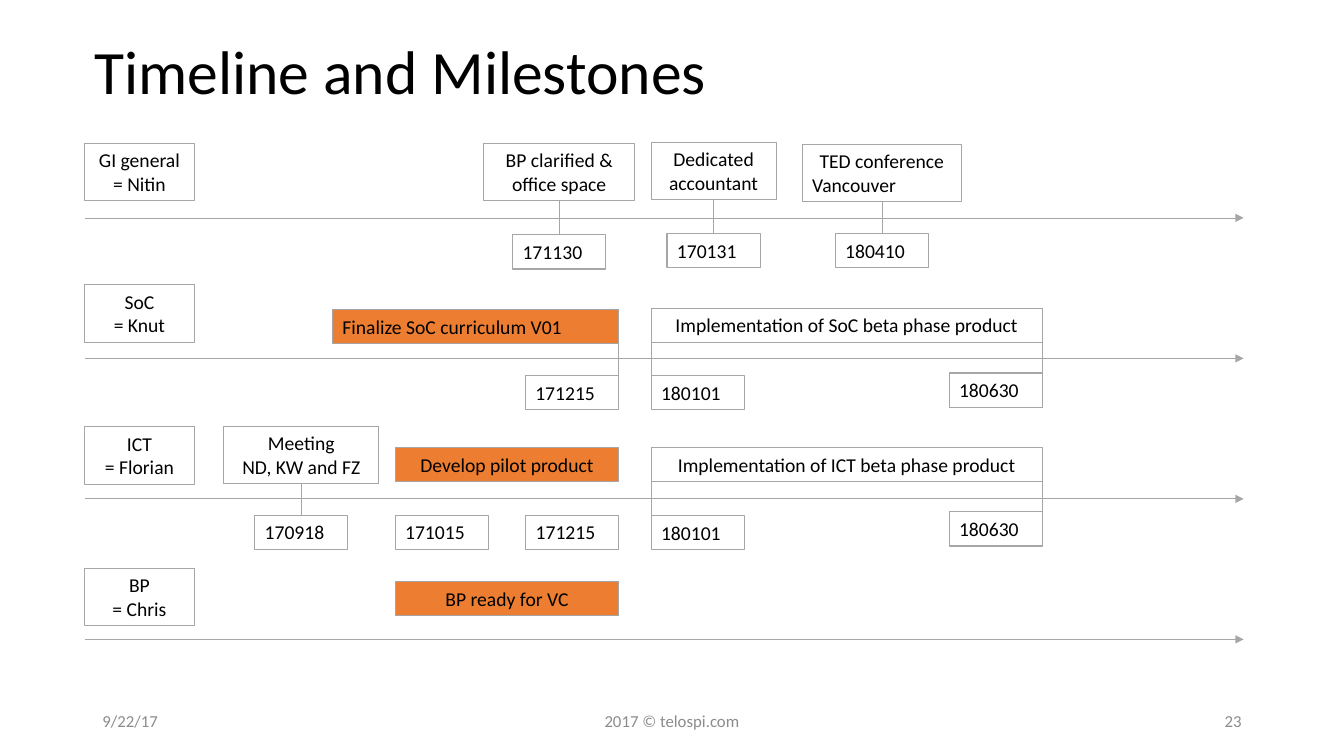
from lxml.etree import SubElement
from pptx import Presentation
from pptx.dml.color import RGBColor
from pptx.enum.shapes import MSO_CONNECTOR, MSO_SHAPE
from pptx.enum.text import MSO_ANCHOR, PP_ALIGN as ALIGN
from pptx.oxml.ns import qn
from pptx.util import Cm, Pt

COLORS = {"text": "000000", "footer": "8C8C8C", "line": "A6A6A6",
          "date": "FFFFFF", "active": "ED7D31"}
FONT = "Calibri"
LEFT, CENTER, RIGHT = ALIGN.LEFT, ALIGN.CENTER, ALIGN.RIGHT

TITLE = "Timeline and Milestones"
# text, left, width, alignment
FOOTERS = [
    ("9/22/17", 2.33, 7.62, LEFT),
    ("2017 © telospi.com", 11.22, 11.43, CENTER),
    ("23", 23.92, 7.62, RIGHT),
]
LANES = [["GI general = Nitin"], ["SoC", "= Knut"],
         ["ICT", "= Florian"], ["BP", "= Chris"]]
# paragraphs with alignment, left, top, width, date, date top
MILESTONES = [
    ([("BP clarified & office space", CENTER)], 12.19, 3.61, 3.81, "171130", 5.92),
    ([("Dedicated accountant", CENTER)], 16.41, 3.58, 3.15, "170131", 5.89),
    ([("TED conference", CENTER), ("Vancouver", LEFT)], 20.22, 3.63, 4.01, "180410", 5.89),
    ([("Meeting", CENTER), ("ND, KW and FZ", CENTER)], 5.64, 10.74, 3.91, "170918", 12.98),
]
# text, alignment, left, top, width, fill,
# dates: text, top, bar edge it sits under, whether a line joins them
PHASES = [
    ("Finalize SoC curriculum V01", LEFT, 8.38, 7.8, 7.21, "active",
     [("171215", 9.47, RIGHT, True)]),
    ("Implementation of SoC beta phase product", CENTER, 16.41, 7.77, 9.86, None,
     [("180101", 9.47, LEFT, True), ("180630", 9.4, RIGHT, True)]),
    ("Develop pilot product", CENTER, 9.96, 11.28, 5.64, "active",
     [("171015", 12.98, LEFT, False), ("171215", 12.98, RIGHT, False)]),
    ("Implementation of ICT beta phase product", CENTER, 16.41, 11.28, 9.86, None,
     [("180101", 13, LEFT, True), ("180630", 12.9, RIGHT, True)]),
    ("BP ready for VC", CENTER, 9.96, 14.66, 5.64, "active", []),
]

AXIS_LEFT, AXIS_RIGHT, AXIS_TOP, AXIS_PITCH = 2.13, 31.34, 5.49, 3.54
LANE_TOP, LANE_PITCH, LANE_WIDTH = 3.61, 3.57, 2.77
TALL, LOW, DATE_WIDTH = 1.45, 0.86, 2.35


def rgb(name):
    return RGBColor.from_string(COLORS[name])


def write(frame, paragraphs, size, color, anchor):
    """Fill a text frame with (text, alignment) paragraphs."""
    frame.word_wrap = True
    frame.vertical_anchor = anchor
    for index, (text, alignment) in enumerate(paragraphs):
        paragraph = frame.add_paragraph() if index else frame.paragraphs[0]
        paragraph.text = text
        paragraph.alignment = alignment
        paragraph.font.name = FONT
        paragraph.font.size = Pt(size)
        paragraph.font.color.rgb = rgb(color)


def add_label(slide, paragraphs, left, top, width, height, size, color):
    label = slide.shapes.add_textbox(Cm(left), Cm(top), Cm(width), Cm(height))
    write(label.text_frame, paragraphs, size, color, MSO_ANCHOR.MIDDLE)
    return label


def add_box(slide, paragraphs, left, top, width, height, fill=None):
    box = slide.shapes.add_shape(MSO_SHAPE.RECTANGLE, Cm(left), Cm(top), Cm(width), Cm(height))
    box.shadow.inherit = False
    if fill:
        box.fill.solid()
        box.fill.fore_color.rgb = rgb(fill)
    else:
        box.fill.background()
    box.line.color.rgb = rgb("line")
    box.line.width = Pt(0.75)
    write(box.text_frame, paragraphs, 14, "text", MSO_ANCHOR.TOP)


def add_date(slide, date, left, top):
    add_box(slide, [(date, LEFT)], left, top, DATE_WIDTH, LOW, "date")


def add_line(slide, x1, y1, x2, y2, arrow=False):
    line = slide.shapes.add_connector(MSO_CONNECTOR.STRAIGHT, Cm(x1), Cm(y1), Cm(x2), Cm(y2))
    line.line.color.rgb = rgb("line")
    line.line.width = Pt(0.5)
    if arrow:
        SubElement(line.line._get_or_add_ln(), qn("a:tailEnd"), type="triangle")
    SubElement(line._element.spPr, qn("a:effectLst"))


def add_lanes(slide):
    for index, owner in enumerate(LANES):
        axis = AXIS_TOP + index * AXIS_PITCH
        add_line(slide, AXIS_LEFT, axis, AXIS_RIGHT, axis, arrow=True)
        add_box(slide, [(text, CENTER) for text in owner], AXIS_LEFT,
                LANE_TOP + index * LANE_PITCH, LANE_WIDTH, TALL)


def add_milestones(slide):
    for paragraphs, left, top, width, date, date_top in MILESTONES:
        middle = left + width / 2
        add_box(slide, paragraphs, left, top, width, TALL)
        add_line(slide, middle, top + TALL, middle, date_top)
        add_date(slide, date, middle - DATE_WIDTH / 2, date_top)


def add_phases(slide):
    for text, alignment, left, top, width, fill, dates in PHASES:
        add_box(slide, [(text, alignment)], left, top, width, LOW, fill)
        for date, date_top, side, joined in dates:
            edge = left if side == LEFT else left + width
            add_date(slide, date, edge if side == LEFT else edge - DATE_WIDTH, date_top)
            if joined:
                add_line(slide, edge, top + LOW / 2, edge, date_top + LOW / 2)


def main():
    deck = Presentation()
    deck.slide_width, deck.slide_height = Cm(33.87), Cm(19.05)
    slide = deck.slides.add_slide(deck.slide_layouts[6])
    title = add_label(slide, [(TITLE, LEFT)], AXIS_LEFT, 0.05, 29.21, 3.68, 44, "text")
    title.text_frame.paragraphs[0].line_spacing = 0.9
    for text, left, width, alignment in FOOTERS:
        add_label(slide, [(text, alignment)], left, 17.65, width, 1.02, 12, "footer")
    add_lanes(slide)
    add_milestones(slide)
    add_phases(slide)
    deck.save("out.pptx")


if __name__ == "__main__":
    main()
